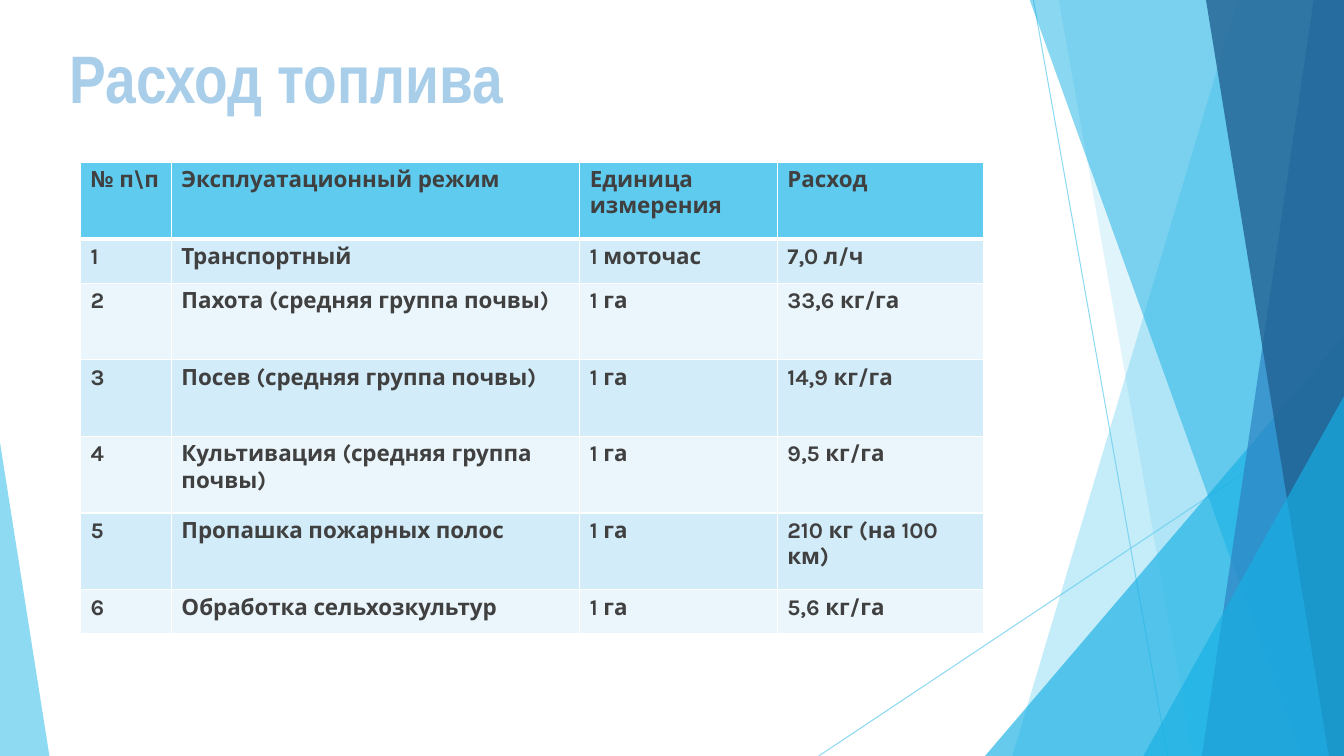
"""Build the fuel consumption slide with its faceted side decoration."""
from dataclasses import dataclass

from lxml.etree import SubElement
from pptx import Presentation
from pptx.dml.color import RGBColor
from pptx.enum.shapes import MSO_CONNECTOR, MSO_SHAPE
from pptx.enum.text import MSO_ANCHOR, MSO_AUTO_SIZE, PP_ALIGN
from pptx.oxml.ns import qn
from pptx.util import Inches, Pt


@dataclass(frozen=True)
class Theme:
    sky: str = "5FCBEF"
    cyan: str = "17B0E4"
    blue: str = "2E83C3"
    navy: str = "226292"
    title: str = "A8CEEA"
    text: str = "404040"
    white: str = "FFFFFF"
    bands: tuple[str, str] = ("D2ECF9", "EAF6FC")
    title_font: str = "Arial Narrow"
    table_font: str = "Karla"
    title_size: float = 48
    table_size: float = 16
    title_outline: float = 1.75
    line_width: float = 0.75
    border_width: float = 1
    header_border_width: float = 3


@dataclass(frozen=True)
class Ray:
    start: tuple[float, float]
    end: tuple[float, float]


@dataclass(frozen=True)
class Panel:
    top_left: float
    bottom_left: float
    color: str
    opacity: int


@dataclass(frozen=True)
class Triangle:
    left: float
    top: float
    width: float
    apex: float
    color: str
    opacity: int


THEME = Theme()
WIDTH, HEIGHT = 13.33, 7.5
PANEL_TOP = -0.01
RAYS = [Ray((10.25, 0), (11.58, HEIGHT)), Ray((WIDTH, 4.03), (8.12, HEIGHT))]
FACETS = [
    Panel(12.28, 10.04, THEME.sky, 36),
    Panel(10.5, 11.83, THEME.sky, 20),
    Triangle(9.77, 3.33, 3.56, 1, THEME.cyan, 66),
    Panel(10.21, 12.91, THEME.cyan, 50),
    Panel(13.03, 11.92, THEME.blue, 70),
    Panel(11.96, 13.18, THEME.navy, 80),
    Triangle(11.34, 3.93, 1.99, 1, THEME.cyan, 66),
    Triangle(0, 4.39, 0.49, 0, THEME.sky, 70),
]
COLUMN_WIDTHS = [0.9, 4.05, 1.96, 2.05]
SHORT_ROW, TALL_ROW = 0.44, 0.76
SHORT_ROWS = (1, 6)
ROWS = [
    ("№ п\\п", "Эксплуатационный режим", "Единица измерения", "Расход"),
    ("1", "Транспортный", "1 моточас", "7,0 л/ч"),
    ("2", "Пахота (средняя группа почвы)", "1 га", "33,6 кг/га"),
    ("3", "Посев (средняя группа почвы)", "1 га", "14,9 кг/га"),
    ("4", "Культивация (средняя группа почвы)", "1 га", "9,5 кг/га"),
    ("5", "Пропашка пожарных полос", "1 га", "210 кг (на 100 км)"),
    ("6", "Обработка сельхозкультур", "1 га", "5,6 кг/га"),
]


def apply_format(target, values: dict) -> None:
    for name, value in values.items():
        setattr(target, name, value)


def set_opacity(element, opacity: int) -> None:
    for color in element.iter(qn("a:srgbClr")):
        SubElement(color, qn("a:alpha"), val=str(opacity * 1000))


def add_solid_line(parent, tag: str, width: float, color: str):
    line = SubElement(parent, qn(tag), w=str(Pt(width)))
    fill = SubElement(line, qn("a:solidFill"))
    SubElement(fill, qn("a:srgbClr"), val=color)
    return line


def draw_ray(slide, ray: Ray) -> None:
    points = [Inches(value) for value in (*ray.start, *ray.end)]
    connector = slide.shapes.add_connector(MSO_CONNECTOR.STRAIGHT, *points)
    connector.line.color.rgb = RGBColor.from_string(THEME.sky)
    connector.line.width = Pt(THEME.line_width)
    properties = connector._element.spPr
    set_opacity(properties, 70)
    SubElement(properties, qn("a:effectLst"))


def build_panel(slide, panel: Panel):
    builder = slide.shapes.build_freeform(
        Inches(panel.top_left), Inches(PANEL_TOP))
    corners = [(WIDTH, PANEL_TOP), (WIDTH, HEIGHT), (panel.bottom_left, HEIGHT)]
    builder.add_line_segments([(Inches(x), Inches(y)) for x, y in corners])
    return builder.convert_to_shape()


def build_triangle(slide, triangle: Triangle):
    shape = slide.shapes.add_shape(
        MSO_SHAPE.ISOSCELES_TRIANGLE, Inches(triangle.left),
        Inches(triangle.top), Inches(triangle.width),
        Inches(HEIGHT - triangle.top))
    shape.adjustments[0] = triangle.apex
    return shape


def draw_facet(slide, facet: Panel | Triangle) -> None:
    build = build_panel if isinstance(facet, Panel) else build_triangle
    shape = build(slide, facet)
    shape.shadow.inherit = False
    shape.fill.solid()
    shape.fill.fore_color.rgb = RGBColor.from_string(facet.color)
    shape.line.fill.background()
    set_opacity(shape._element.spPr, facet.opacity)


def draw_title(slide, text: str) -> None:
    title = slide.shapes.title
    apply_format(title, {"left": Inches(0.59), "top": Inches(0.43),
                         "width": Inches(8.58), "height": Inches(0.68)})
    apply_format(title.text_frame, {
        "text": text, "word_wrap": True, "auto_size": MSO_AUTO_SIZE.NONE,
        "vertical_anchor": MSO_ANCHOR.MIDDLE, "margin_top": Inches(0.18)})
    paragraph = title.text_frame.paragraphs[0]
    apply_format(paragraph, {"alignment": PP_ALIGN.LEFT, "line_spacing": 0.8,
                             "space_before": Pt(0)})
    font = paragraph.runs[0].font
    apply_format(font, {"name": THEME.title_font, "bold": True,
                        "size": Pt(THEME.title_size)})
    font.color.rgb = RGBColor.from_string(THEME.title)
    properties = paragraph.runs[0]._r.get_or_add_rPr()
    outline = add_solid_line(
        properties, "a:ln", THEME.title_outline, THEME.blue)
    properties.insert(0, outline)


def format_cell(cell, text: str, row_index: int) -> None:
    cell.text = text
    font = cell.text_frame.paragraphs[0].runs[0].font
    apply_format(font, {"name": THEME.table_font, "bold": True,
                        "size": Pt(THEME.table_size)})
    font.color.rgb = RGBColor.from_string(THEME.text)
    properties = cell._tc.get_or_add_tcPr()
    header_edge = {0: "a:lnB", 1: "a:lnT"}.get(row_index)
    for tag in ("a:lnL", "a:lnR", "a:lnT", "a:lnB"):
        width = (THEME.header_border_width if tag == header_edge
                 else THEME.border_width)
        add_solid_line(properties, tag, width, THEME.white)
    color = THEME.bands[(row_index - 1) % 2] if row_index else THEME.sky
    cell.fill.solid()
    cell.fill.fore_color.rgb = RGBColor.from_string(color)


def draw_table(slide) -> None:
    heights = [SHORT_ROW if index in SHORT_ROWS else TALL_ROW
               for index in range(len(ROWS))]
    table = slide.shapes.add_table(
        len(ROWS), len(COLUMN_WIDTHS), Inches(0.8), Inches(1.61),
        Inches(sum(COLUMN_WIDTHS)), Inches(sum(heights))).table
    for column, width in zip(table.columns, COLUMN_WIDTHS):
        column.width = Inches(width)
    for row_index, (row, height) in enumerate(zip(table.rows, heights)):
        row.height = Inches(height)
        for cell, text in zip(row.cells, ROWS[row_index]):
            format_cell(cell, text, row_index)


def main() -> None:
    presentation = Presentation()
    presentation.slide_width = Inches(WIDTH)
    presentation.slide_height = Inches(HEIGHT)
    slide = presentation.slides.add_slide(presentation.slide_layouts[5])
    for ray in RAYS:
        draw_ray(slide, ray)
    for facet in FACETS:
        draw_facet(slide, facet)
    draw_title(slide, "Расход топлива")
    draw_table(slide)
    presentation.save("out.pptx")


if __name__ == "__main__":
    main()
